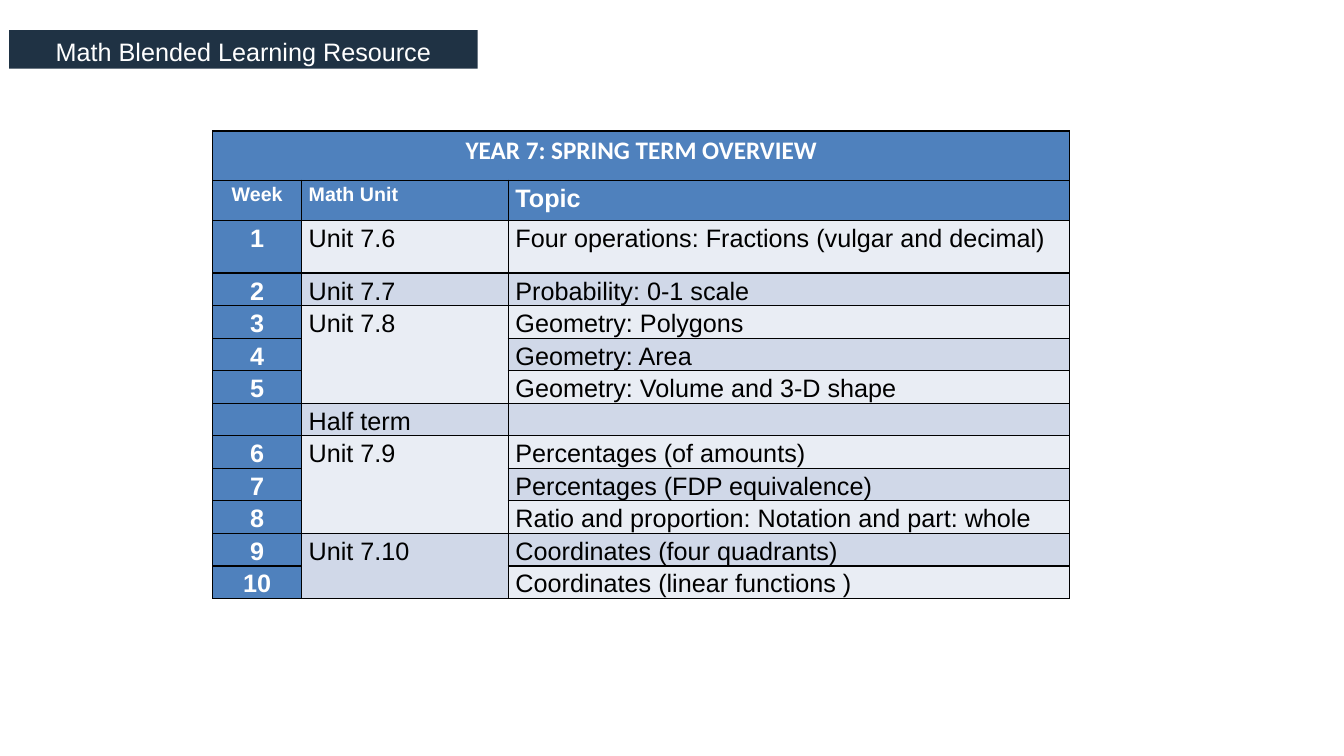
from lxml import etree
from pptx import Presentation, util as u
from pptx.dml.color import RGBColor
from pptx.enum import shapes, text
from pptx.oxml.ns import qn

NAVY, BLUE, BLACK, WHITE = "1F3244", "4F81BD", "000000", "FFFFFF"
BANDS = ("E9EDF4", "D0D8E8")
COLUMN_WIDTHS = (2.24, 5.21, 14.15)
HEADING_HEIGHTS = (1.24, 1.02, 1.32)
WEEK_HEIGHT = 0.82

# Week, unit, topic; None continues the unit above
WEEKS = [
    ("1", "Unit 7.6", "Four operations: Fractions (vulgar and decimal)"),
    ("2", "Unit 7.7", "Probability: 0-1 scale"),
    ("3", "Unit 7.8", "Geometry: Polygons"),
    ("4", None, "Geometry: Area"),
    ("5", None, "Geometry: Volume and 3-D shape"),
    ("", "Half term", ""),
    ("6", "Unit 7.9", "Percentages (of amounts)"),
    ("7", None, "Percentages (FDP equivalence)"),
    ("8", None, "Ratio and proportion: Notation and part: whole"),
    ("9", "Unit 7.10", "Coordinates (four quadrants)"),
    ("10", None, "Coordinates (linear functions )"),
]

CELL_MARGINS = {"margin_left": u.Cm(0.18), "margin_right": u.Cm(0.18),
                "margin_top": 0, "margin_bottom": 0}
CELL_PARAGRAPH = {"line_spacing": 1.15, "space_after": u.Pt(10)}


def apply_format(target, values):
    for name, value in values.items():
        setattr(target, name, value)


def set_fill(target, color):
    target.fill.solid()
    target.fill.fore_color.rgb = RGBColor.from_string(color)


def write_text(paragraph, words, color, centred=False, size=18, bold=False, font="Arial"):
    paragraph.alignment = text.PP_ALIGN.CENTER if centred else text.PP_ALIGN.LEFT
    run = paragraph.add_run()
    run.text = words
    apply_format(run.font, {"name": font, "size": u.Pt(size), "bold": bold})
    run.font.color.rgb = RGBColor.from_string(color)


def add_borders(cell):
    properties = cell._tc.get_or_add_tcPr()
    for side in ("a:lnL", "a:lnR", "a:lnT", "a:lnB"):
        line = etree.SubElement(properties, qn(side), w=str(u.Pt(1)))
        fill = etree.SubElement(line, qn("a:solidFill"))
        etree.SubElement(fill, qn("a:srgbClr"), val=BLACK)


def fill_cell(cell, words, background, color, **style):
    apply_format(cell, CELL_MARGINS)
    add_borders(cell)
    set_fill(cell, background)
    if words:
        paragraph = cell.text_frame.paragraphs[0]
        apply_format(paragraph, CELL_PARAGRAPH)
        write_text(paragraph, words, color, **style)


def add_banner(slide, words):
    banner = slide.shapes.add_shape(shapes.MSO_SHAPE.RECTANGLE,
                                    u.Cm(0.23), u.Cm(0.76), u.Cm(11.81), u.Cm(0.97))
    banner.shadow.inherit = False
    set_fill(banner, NAVY)
    banner.line.fill.background()
    apply_format(banner.text_frame, {
        "word_wrap": True, "vertical_anchor": text.MSO_ANCHOR.MIDDLE,
        "margin_top": u.Cm(0.1), "margin_bottom": 0})
    write_text(banner.text_frame.paragraphs[0], words, WHITE, centred=True)


def add_overview_table(slide):
    heights = HEADING_HEIGHTS + (WEEK_HEIGHT,) * (len(WEEKS) - 1)
    table = slide.shapes.add_table(
        len(heights), len(COLUMN_WIDTHS), u.Cm(5.36), u.Cm(3.3),
        u.Cm(sum(COLUMN_WIDTHS)), u.Cm(sum(heights))).table
    for column, width in zip(table.columns, COLUMN_WIDTHS):
        column.width = u.Cm(width)
    for row, height in zip(table.rows, heights):
        row.height = u.Cm(height)

    # Title and column headings
    for column, words in enumerate(("YEAR 7: SPRING TERM OVERVIEW", "", "")):
        fill_cell(table.cell(0, column), words, BLUE, WHITE,
                  centred=True, bold=True, font="Calibri")
    table.cell(0, 0).merge(table.cell(0, 2))
    for column, (words, size) in enumerate((("Week", 14), ("Math Unit", 14), ("Topic", 18))):
        fill_cell(table.cell(1, column), words, BLUE, WHITE,
                  centred=column == 0, size=size, bold=True)

    # Weeks, in alternating bands
    for index, (week, unit, topic) in enumerate(WEEKS):
        row, band = index + 2, BANDS[index % 2]
        fill_cell(table.cell(row, 0), week, BLUE, WHITE, centred=True, bold=True)
        fill_cell(table.cell(row, 1), unit, band, BLACK)
        fill_cell(table.cell(row, 2), topic, band, BLACK)

    # Units that run over several weeks
    starts = [index for index, week in enumerate(WEEKS) if week[1]] + [len(WEEKS)]
    for start, end in zip(starts, starts[1:]):
        if end - start > 1:
            table.cell(start + 2, 1).merge(table.cell(end + 1, 1))


def main():
    presentation = Presentation()
    apply_format(presentation, {"slide_width": u.Cm(33.87), "slide_height": u.Cm(19.05)})
    slide = presentation.slides.add_slide(presentation.slide_layouts[6])
    add_banner(slide, "Math Blended Learning Resource")
    add_overview_table(slide)
    presentation.save("out.pptx")


if __name__ == "__main__":
    main()
